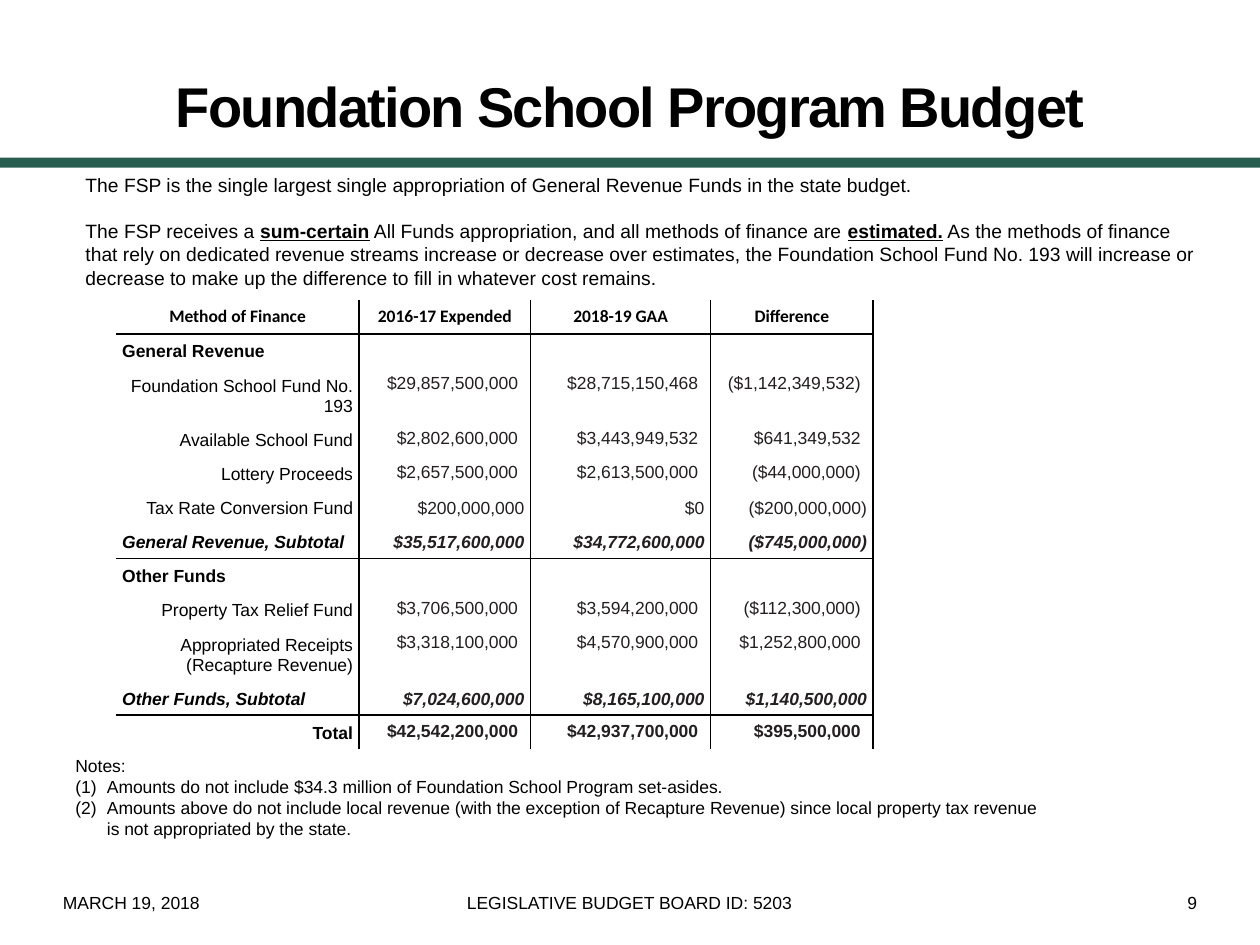
from dataclasses import dataclass

from lxml import etree
from pptx import Presentation
from pptx import util as u
from pptx.dml.color import RGBColor
from pptx.enum import shapes, text
from pptx.oxml.ns import qn

LEFT, CENTER, RIGHT = text.PP_ALIGN.LEFT, text.PP_ALIGN.CENTER, text.PP_ALIGN.RIGHT
TOP, MIDDLE, BOTTOM = text.MSO_ANCHOR.TOP, text.MSO_ANCHOR.MIDDLE, text.MSO_ANCHOR.BOTTOM


@dataclass(frozen=True)
class Theme:
    ink: str = "000000"
    figure: str = "231F20"
    paper: str = "FFFFFF"
    band: str = "285E50"
    font: str = "Arial"
    header_font: str = "Calibri"
    title: int = 32
    body: int = 11
    small: int = 10
    rule: int = 1


COLUMNS = [1.93, 1.36, 1.43, 1.29]
HEADER = ["Method of Finance", "2016-17 Expended", "2018-19 GAA", "Difference"]
ROW, TALL_ROW = 0.27, 0.43
# Each row: kind, label, figures
FINANCE = [
    ("section", "General Revenue", ["", "", ""]),
    ("tall", "Foundation School Fund No. 193",
     ["$29,857,500,000", "$28,715,150,468", "($1,142,349,532)"]),
    ("item", "Available School Fund", ["$2,802,600,000", "$3,443,949,532", "$641,349,532"]),
    ("item", "Lottery Proceeds", ["$2,657,500,000", "$2,613,500,000", "($44,000,000)"]),
    ("tight", "Tax Rate Conversion Fund", ["$200,000,000", "$0", "($200,000,000)"]),
    ("subtotal", "General Revenue, Subtotal",
     ["$35,517,600,000", "$34,772,600,000", "($745,000,000)"]),
    ("section", "Other Funds", ["", "", ""]),
    ("item", "Property Tax Relief Fund", ["$3,706,500,000", "$3,594,200,000", "($112,300,000)"]),
    ("tall", "Appropriated Receipts (Recapture Revenue)",
     ["$3,318,100,000", "$4,570,900,000", "$1,252,800,000"]),
    ("subtotal", "Other Funds, Subtotal",
     ["$7,024,600,000", "$8,165,100,000", "$1,140,500,000"]),
    ("total", "Total", ["$42,542,200,000", "$42,937,700,000", "$395,500,000"]),
]


class SlideBuilder:
    def __init__(self, slide, theme):
        self.s = slide
        self.theme = theme

    def run(self, p, words, color=None, **style):
        r = p.add_run()
        r.text = words
        settings = {"name": self.theme.font, "size": u.Pt(self.theme.small), **style}
        for key, value in settings.items():
            setattr(r.font, key, value)
        r.font.color.rgb = RGBColor.from_string(color or self.theme.ink)
        return r

    def band(self, *box):
        sp = self.s.shapes.add_shape(shapes.MSO_SHAPE.RECTANGLE, *map(u.Inches, box))
        sp.shadow.inherit = False
        sp.fill.solid()
        sp.fill.fore_color.rgb = RGBColor.from_string(self.theme.band)
        sp.line.fill.background()

    def text_box(self, box, inset=True, anchor=TOP):
        tf = self.s.shapes.add_textbox(*map(u.Inches, box)).text_frame
        tf.word_wrap = True
        tf.vertical_anchor = anchor
        if not inset:
            for side in ("left", "top", "right", "bottom"):
                setattr(tf, f"margin_{side}", 0)
        return tf

    def title(self, words, box):
        p = self.text_box(box, anchor=MIDDLE).paragraphs[0]
        p.alignment = CENTER
        r = self.run(p, words, size=u.Pt(self.theme.title), bold=True)
        r.font._element.set("spc", "-100")

    def footer(self, words, left, width, align):
        p = self.text_box((left, 7.08, width, 0.4), inset=False).paragraphs[0]
        p.alignment = align
        self.run(p, words)

    def body(self, paragraphs, box):
        """Each paragraph is a list of (words, emphasised) pairs."""
        tf = self.text_box(box)
        for i, pieces in enumerate(paragraphs):
            p = tf.add_paragraph() if i else tf.paragraphs[0]
            p.space_before = u.Pt(13 if i else 0)
            for words, strong in pieces:
                self.run(p, words, size=u.Pt(self.theme.body), bold=strong, underline=strong)

    def notes(self, heading, items, box):
        tf = self.text_box(box)
        self.run(tf.paragraphs[0], heading)
        for item in items:
            p = tf.add_paragraph()
            self.run(p, item)
            pPr = p._p.get_or_add_pPr()
            pPr.set("marL", str(u.Inches(0.25)))
            pPr.set("indent", str(-u.Inches(0.25)))
            etree.SubElement(pPr, qn("a:buFont"), typeface="+mj-lt")
            etree.SubElement(pPr, qn("a:buAutoNum"), type="arabicParenBoth")

    def borders(self, cell, **colors):
        """Draw the sides L, R, T, B that have a colour and clear the others."""
        tcPr = cell._tc.get_or_add_tcPr()
        for side in "LRTB":
            ln = etree.SubElement(tcPr, qn(f"a:ln{side}"), w=str(u.Pt(self.theme.rule)))
            if colors.get(side):
                fill = etree.SubElement(ln, qn("a:solidFill"))
                etree.SubElement(fill, qn("a:srgbClr"), val=colors[side])
            else:
                etree.SubElement(ln, qn("a:noFill"))

    def cell(self, cell, words, align, tight, **style):
        if tight:
            cell.margin_left = cell.margin_right = u.Inches(0.05)
            cell.vertical_anchor = BOTTOM
        cell.fill.solid()
        cell.fill.fore_color.rgb = RGBColor.from_string(self.theme.paper)
        p = cell.text_frame.paragraphs[0]
        p.alignment = align
        if words:
            self.run(p, words, **style)
        else:
            etree.SubElement(p._p, qn("a:endParaRPr"), sz=str(self.theme.small * 100))

    def finance_table(self, header, rows, left, top):
        t = self.theme
        rows = [("header", header[0], header[1:])] + rows
        kinds = [kind for kind, *_ in rows]
        heights = [TALL_ROW if kind == "tall" else ROW for kind in kinds]
        box = (left, top, sum(COLUMNS), sum(heights))
        table = self.s.shapes.add_table(len(rows), len(COLUMNS), *map(u.Inches, box)).table
        table.first_row = table.horz_banding = False
        for column, width in zip(table.columns, COLUMNS):
            column.width = u.Inches(width)
        ruled = ("header", "subtotal")
        for i, (kind, label, figures) in enumerate(rows):
            table.rows[i].height = u.Inches(heights[i])
            top_rule = t.ink if i and kinds[i - 1] in ruled else None
            style = {"bold": kind in ("header", "section", "subtotal", "total"),
                     "italic": kind == "subtotal",
                     "name": t.header_font if kind == "header" else t.font}
            for j, words in enumerate([label] + figures):
                cell = table.cell(i, j)
                self.borders(cell, L=t.ink if j else None, R=t.ink, T=top_rule,
                             B=t.ink if kind in ruled else None)
                if kind == "header":
                    align = CENTER
                else:
                    align = LEFT if j == 0 and kind in ("section", "subtotal") else RIGHT
                tight = kind != "header" and (j == 0 or kind in ("tight", "subtotal"))
                color = t.figure if j and kind != "header" else t.ink
                self.cell(cell, words, align, tight, color=color, **style)


def main():
    prs = Presentation()
    prs.slide_width, prs.slide_height = u.Inches(10), u.Inches(7.5)
    b = SlideBuilder(prs.slides.add_slide(prs.slide_layouts[6]), Theme())
    b.band(0, 1.25, 10, 0.08)
    b.footer("MARCH 19, 2018", 0.5, 2.33, LEFT)
    b.footer("LEGISLATIVE BUDGET BOARD ID: 5203", 2.83, 4.33, CENTER)
    b.footer("9", 7.17, 2.33, RIGHT)
    b.title("Foundation School Program Budget", (0.5, 0.25, 9, 1.17))
    b.notes("Notes:", [
        "Amounts do not include $34.3 million of Foundation School Program set-asides.",
        "Amounts above do not include local revenue (with the exception of Recapture Revenue) "
        "since local property tax revenue is not appropriated by the state.",
    ], (0.5, 5.94, 7.92, 0.77))
    b.body([
        [("The FSP is the single largest single appropriation of General Revenue Funds "
          "in the state budget.", False)],
        [("The FSP receives a ", False), ("sum-certain", True),
         (" All Funds appropriation, and all methods of finance are ", False),
         ("estimated.", True),
         (" As the methods of finance that rely on dedicated revenue streams increase or "
          "decrease over estimates, the Foundation School Fund No. 193 will increase or "
          "decrease to make up the difference to fill in whatever cost remains.", False)],
    ], (0.58, 1.33, 9.08, 1.03))
    b.finance_table(HEADER, FINANCE, 0.92, 2.38)
    prs.save("out.pptx")


if __name__ == "__main__":
    main()
